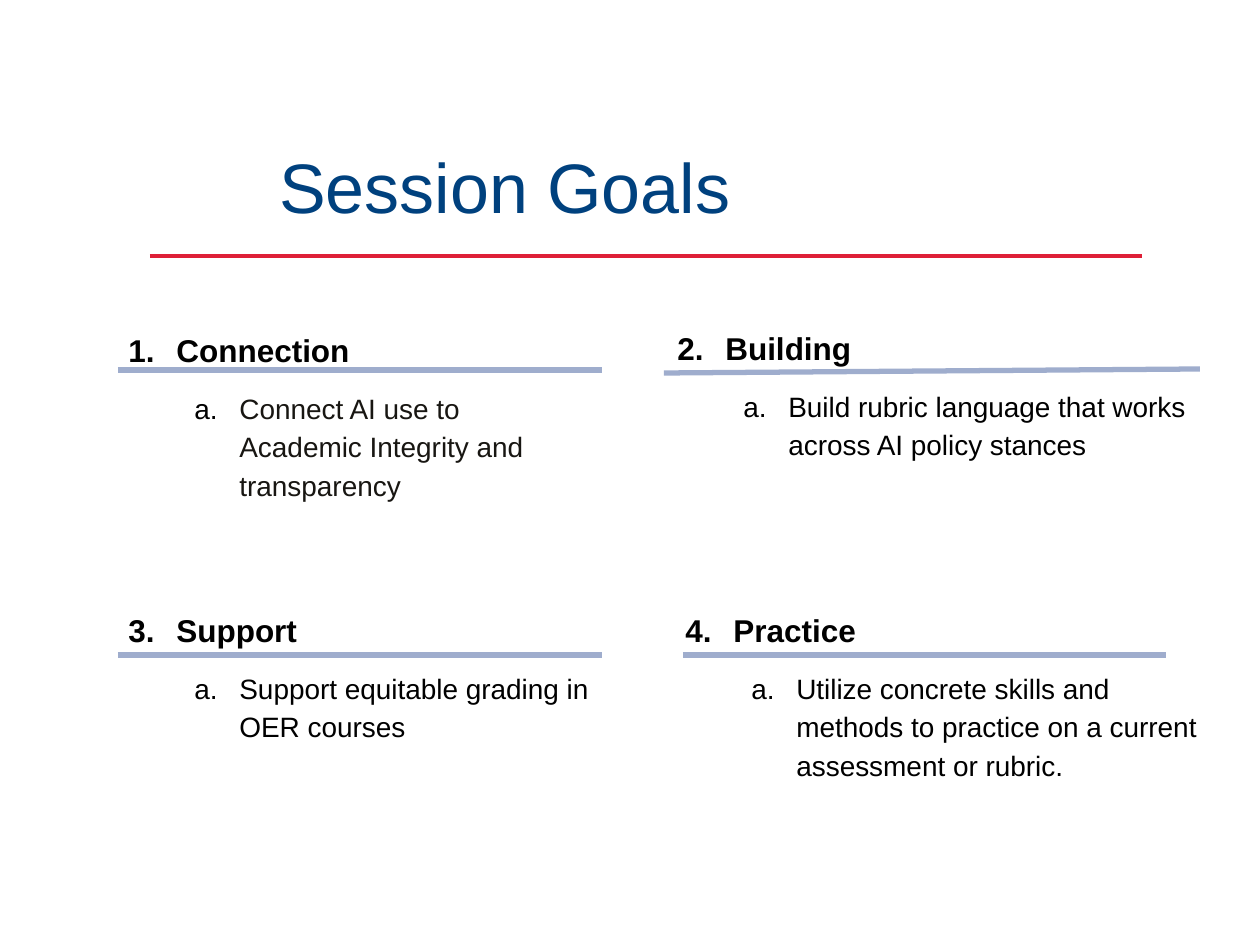
"""Build the Session Goals slide with four numbered goals."""
from dataclasses import dataclass

import pptx
import pptx.dml.color
import pptx.enum.shapes
import pptx.enum.text
import pptx.oxml
import pptx.oxml.ns
import pptx.util
from lxml import etree

SCALE = 914400 / 126
COLORS = {
    "navy": "00417E",
    "red": "DE1F37",
    "rule": "9FADCD",
    "black": "000000",
    "dark": "181612",
}
FORMATS = {
    "title": {"size": pptx.util.Pt(40), "bold": False},
    "head": {"size": pptx.util.Pt(18), "bold": True},
    "item": {"size": pptx.util.Pt(16), "bold": False},
}


@dataclass
class Line:
    x1: int
    y1: int
    x2: int
    y2: int
    color: str = "rule"
    width: float = 3


@dataclass
class Box:
    left: int
    top: int
    width: int
    height: int = 194


@dataclass
class Goal:
    head: str
    item: str
    box: Box
    rule: Line
    color: str = "black"


GOALS = [
    Goal("Connection", "Connect AI use to Academic Integrity and transparency",
         Box(101, 319, 496), Line(118, 370, 602, 370), "dark"),
    Goal("Building", "Build rubric language that works across AI policy stances",
         Box(650, 317, 564), Line(664, 373, 1200, 369)),
    Goal("Support", "Support equitable grading in OER courses",
         Box(101, 599, 533), Line(118, 655, 602, 655)),
    Goal("Practice",
         "Utilize concrete skills and methods to practice on a current assessment or rubric.",
         Box(658, 599, 557), Line(683, 655, 1166, 655)),
]


def px(count: int) -> int:
    """Turn px into EMU."""
    return round(count * SCALE)


def tint(name: str) -> pptx.dml.color.RGBColor:
    """Look up a named colour."""
    return pptx.dml.color.RGBColor.from_string(COLORS[name])


def draw_line(slide, line: Line) -> None:
    """Draw one straight rule."""
    rule = slide.shapes.add_connector(
        pptx.enum.shapes.MSO_CONNECTOR.STRAIGHT,
        *map(px, (line.x1, line.y1, line.x2, line.y2)))
    rule.line.color.rgb = tint(line.color)
    rule.line.width = pptx.util.Pt(line.width)
    etree.SubElement(rule._element.spPr, pptx.oxml.ns.qn("a:effectLst"))


def add_frame(slide, box: Box):
    """Add a wrapping text box and return its frame."""
    shape = slide.shapes.add_textbox(
        *map(px, (box.left, box.top, box.width, box.height)))
    shape.text_frame.word_wrap = True
    return shape.text_frame


def add_text(para, text: str, style: str, color: str, space: float) -> None:
    """Fill a paragraph with one formatted run."""
    para.line_spacing = space
    run = para.add_run()
    run.text = text
    run.font.name = "Arial"
    run.font.color.rgb = tint(color)
    for key, value in FORMATS[style].items():
        setattr(run.font, key, value)


def add_mark(para, kind: str, start: int, left: int, hang: int) -> None:
    """Give a paragraph an automatic number and a hanging indent."""
    props = para._p.get_or_add_pPr()
    props.set("marL", str(px(left)))
    props.set("indent", str(-px(hang)))
    shade = etree.SubElement(props, pptx.oxml.ns.qn("a:buClr"))
    etree.SubElement(shade, pptx.oxml.ns.qn("a:srgbClr"), val=COLORS["black"])
    mark = etree.SubElement(props, pptx.oxml.ns.qn("a:buAutoNum"), type=kind)
    if start > 1:
        mark.set("startAt", str(start))


def draw_goal(slide, goal: Goal, number: int) -> None:
    """Draw a numbered heading, its item and its rule."""
    frame = add_frame(slide, goal.box)
    head = frame.paragraphs[0]
    add_mark(head, "arabicPeriod", number, 63, 48)
    add_text(head, goal.head, "head", "black", 1.15)
    item = frame.add_paragraph()
    item.level = 1
    add_mark(item, "alphaLcPeriod", 1, 126, 45)
    add_text(item, goal.item, "item", goal.color, 1.15)
    item.space_before = pptx.util.Pt(10)
    draw_line(slide, goal.rule)


def main() -> None:
    """Build and save the slide."""
    deck = pptx.Presentation()
    deck.slide_width = px(1260)
    deck.slide_height = px(945)
    slide = deck.slides.add_slide(deck.slide_layouts[6])
    draw_line(slide, Line(150, 256, 1142, 256, "red", 2.5))
    frame = add_frame(slide, Box(267, 112, 993, 123))
    frame.vertical_anchor = pptx.enum.text.MSO_ANCHOR.BOTTOM
    add_text(frame.paragraphs[0], "Session Goals", "title", "navy", 0.9)
    for number, goal in enumerate(GOALS, 1):
        draw_goal(slide, goal, number)
    deck.save("out.pptx")


if __name__ == "__main__":
    main()
